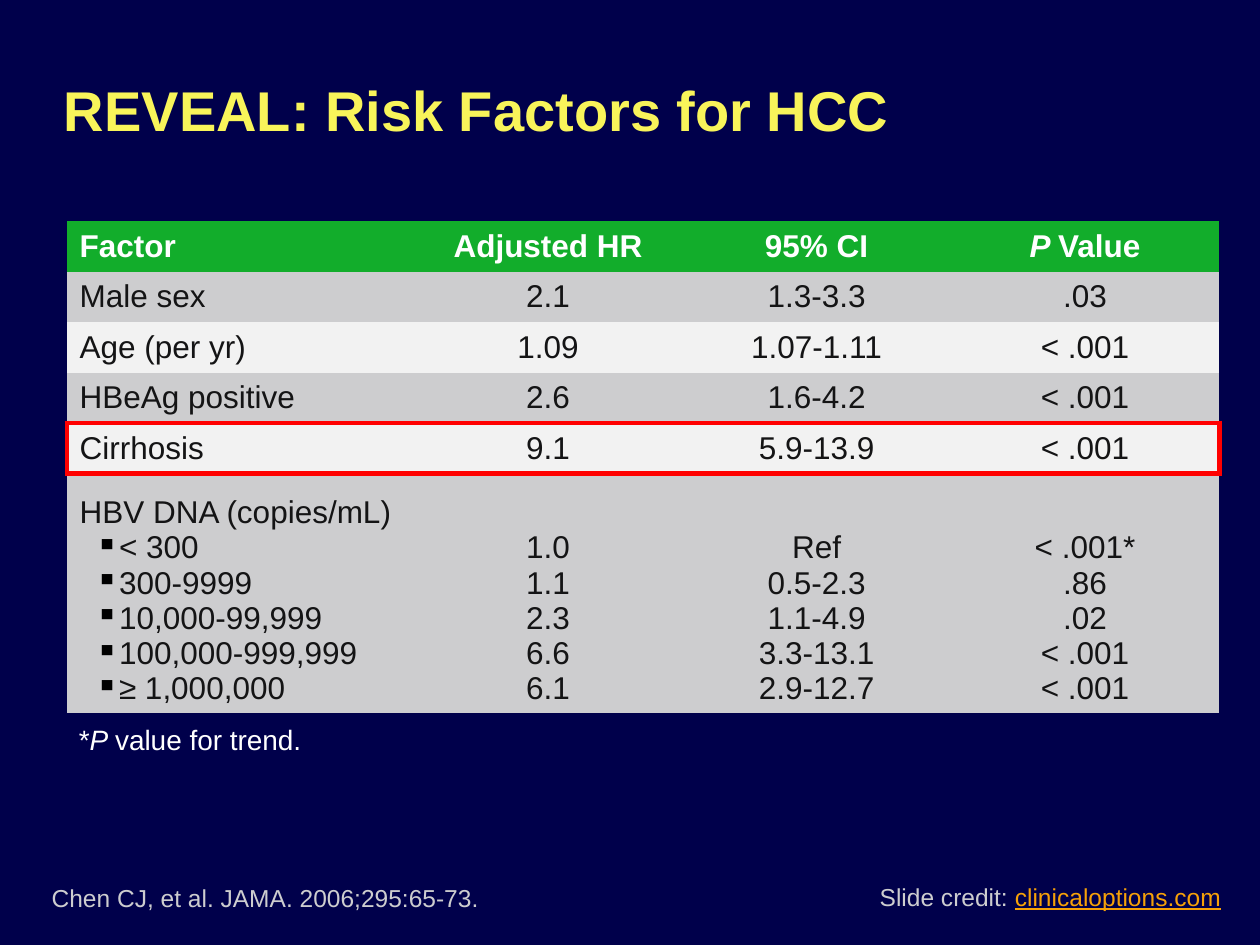
from collections import namedtuple
from dataclasses import dataclass

from lxml.etree import SubElement
from pptx import Presentation
from pptx.dml.color import RGBColor
from pptx.enum.text import MSO_ANCHOR as Anchor, PP_ALIGN as Align
from pptx.oxml.ns import qn
from pptx.util import Pt

Box = namedtuple("Box", "left top width height")


@dataclass(frozen=True)
class Theme:
    font: str = "Arial"
    background: str = "00004B"
    title: str = "F8F45A"
    white: str = "FFFFFF"
    muted: str = "CDCDCF"
    link: str = "F6A108"
    header: str = "12AD2B"
    light: str = "F2F2F2"
    ink: str = "141415"
    bullet: str = "000000"
    highlight: str = "FF0000"
    title_size: int = 32
    table_size: int = 18
    note_size: int = 16
    footer_size: int = 14


THEME = Theme()
NO_STYLE = "{2D5ABB26-0587-4C30-8999-92F81FD0307C}"
COLUMN_SHARES = (0.301, 0.233, 0.233, 0.233)
LEVELS_SHARE = 0.483
HIGHLIGHT_ROW = 4
HIGHLIGHT_WIDTH = 3

HEADER = ("Factor", "Adjusted HR", "95% CI", "P Value")
FACTORS = (
    ("Male sex", "2.1", "1.3-3.3", ".03"),
    ("Age (per yr)", "1.09", "1.07-1.11", "< .001"),
    ("HBeAg positive", "2.6", "1.6-4.2", "< .001"),
    ("Cirrhosis", "9.1", "5.9-13.9", "< .001"),
)
LEVELS_HEADING = "HBV DNA (copies/mL)"
LEVELS = (
    ("< 300", "1.0", "Ref", "< .001*"),
    ("300-9999", "1.1", "0.5-2.3", ".86"),
    ("10,000-99,999", "2.3", "1.1-4.9", ".02"),
    ("100,000-999,999", "6.6", "3.3-13.1", "< .001"),
    ("≥ 1,000,000", "6.1", "2.9-12.7", "< .001"),
)


def add_run(paragraph, text, size, color, bold=False, italic=False, underline=False):
    run = paragraph.add_run()
    run.text = text
    font = run.font
    font.name, font.size = THEME.font, Pt(size)
    font.bold, font.italic, font.underline = bold, italic, underline
    font.color.rgb = RGBColor.from_string(color)


def add_text(slide, box, anchor=Anchor.TOP, wrap=True):
    frame = slide.shapes.add_textbox(*map(Pt, box)).text_frame
    frame.word_wrap = wrap
    frame.vertical_anchor = anchor
    return frame.paragraphs[0]


def add_title(slide, box):
    paragraph = add_text(slide, box, Anchor.MIDDLE)
    add_run(paragraph, "REVEAL: Risk Factors for HCC", THEME.title_size, THEME.title, bold=True)


def add_color(parent, color):
    SubElement(parent, qn("a:srgbClr"), val=color)


def set_bullet(paragraph):
    properties = paragraph._p.get_or_add_pPr()
    properties.set("marL", str(Pt(22.5)))
    properties.set("indent", str(Pt(-13.5)))
    add_color(SubElement(properties, qn("a:buClr")), THEME.bullet)
    SubElement(properties, qn("a:buChar"), char="▪")


def set_borders(cell, sides):
    properties = cell._tc.get_or_add_tcPr()
    for side in sides:
        line = SubElement(properties, qn(f"a:ln{side}"), w=str(Pt(HIGHLIGHT_WIDTH)))
        add_color(SubElement(line, qn("a:solidFill")), THEME.highlight)


def highlight_sides(row, column):
    if row == HIGHLIGHT_ROW:
        left = "L" if column == 0 else ""
        right = "R" if column == len(HEADER) - 1 else ""
        return left + right + "TB"
    return {HIGHLIGHT_ROW - 1: "B", HIGHLIGHT_ROW + 1: "T"}.get(row, "")


def fill_cell(cell, lines, row, column):
    is_header = row == 0
    color = THEME.white if is_header else THEME.ink
    frame = cell.text_frame
    for index, text in enumerate(lines):
        paragraph = frame.add_paragraph() if index else frame.paragraphs[0]
        if column:
            paragraph.alignment = Align.CENTER
        elif index:
            set_bullet(paragraph)
        if text.startswith("P "):
            add_run(paragraph, "P ", THEME.table_size, color, is_header, italic=True)
            text = text[2:]
        add_run(paragraph, text, THEME.table_size, color, is_header)
    set_borders(cell, highlight_sides(row, column))
    cell.vertical_anchor = Anchor.BOTTOM if len(lines) > 1 else Anchor.MIDDLE
    cell.fill.solid()
    band = THEME.muted if row % 2 else THEME.light
    cell.fill.fore_color.rgb = RGBColor.from_string(THEME.header if is_header else band)


def add_risk_table(slide, box):
    rows = [[[text] for text in row] for row in (HEADER, *FACTORS)]
    levels = [list(column) for column in zip(*LEVELS)]
    levels[0].insert(0, LEVELS_HEADING)
    rows.append(levels)

    table = slide.shapes.add_table(len(rows), len(HEADER), *map(Pt, box)).table
    table.first_row = table.horz_banding = False
    table._tbl.tblPr.find(qn("a:tableStyleId")).text = NO_STYLE
    for column, share in zip(table.columns, COLUMN_SHARES):
        column.width = Pt(box.width * share)
    for index, cells in enumerate(rows):
        is_levels = index == len(rows) - 1
        share = LEVELS_SHARE if is_levels else (1 - LEVELS_SHARE) / (len(rows) - 1)
        table.rows[index].height = Pt(box.height * share)
        for column, lines in enumerate(cells):
            fill_cell(table.cell(index, column), lines, index, column)


def add_footnote(slide, box):
    paragraph = add_text(slide, box)
    for text, italic in (("*", False), ("P ", True), ("value for trend.", False)):
        add_run(paragraph, text, THEME.note_size, THEME.white, italic=italic)


def add_footer(slide, box):
    citation = add_text(slide, box._replace(width=464), Anchor.BOTTOM)
    add_run(citation, "Chen CJ, et al. JAMA. 2006;295:65-73.", THEME.footer_size, THEME.muted)
    credit_width = 210
    credit_left = box.left + box.width - credit_width
    credit = add_text(slide, box._replace(left=credit_left, width=credit_width), wrap=False)
    add_run(credit, "Slide credit: ", THEME.footer_size, THEME.muted)
    add_run(credit, "clinicaloptions.com", THEME.footer_size, THEME.link, underline=True)


def main():
    presentation = Presentation()
    presentation.slide_width, presentation.slide_height = Pt(720), Pt(540)
    slide = presentation.slides.add_slide(presentation.slide_layouts[6])
    background = slide.background.fill
    background.solid()
    background.fore_color.rgb = RGBColor.from_string(THEME.background)

    add_title(slide, Box(29.5, 19, 664.5, 87))
    add_risk_table(slide, Box(38.3, 126.4, 658.5, 265))
    add_footnote(slide, Box(38, 409.5, 654, 26.5))
    add_footer(slide, Box(22.4, 500.4, 683.2, 24.5))
    presentation.save("out.pptx")


if __name__ == "__main__":
    main()
